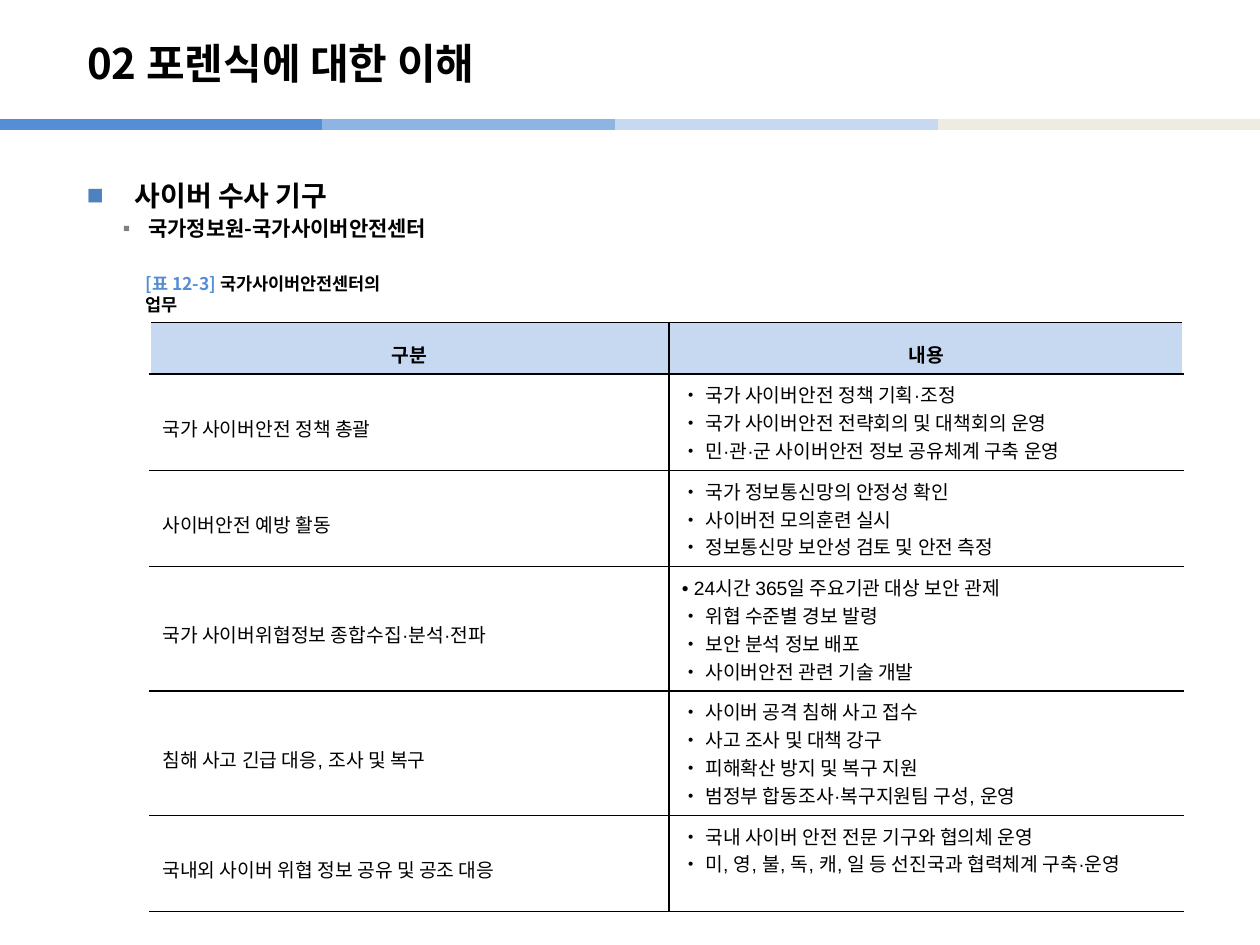
from dataclasses import dataclass

from lxml.etree import SubElement
from pptx import Presentation
from pptx.dml.color import RGBColor
from pptx.enum.shapes import MSO_CONNECTOR
from pptx.enum.text import MSO_ANCHOR, PP_ALIGN
from pptx.oxml.ns import qn
from pptx.util import Cm, Pt


@dataclass(frozen=True)
class Theme:
    """Colours, fonts and type sizes of the slide."""
    black: str = "000000"
    white: str = "FFFFFF"
    blue: str = "558ED5"
    sky: str = "8EB4E3"
    pale: str = "C6D9F1"
    sand: str = "EEECE1"
    mark: str = "4F81BD"
    grey: str = "808080"
    sans: str = "Arial"
    noto: str = "Noto Sans CJK KR"
    title: int = 24
    head: int = 16
    sub: int = 12
    cell: int = 11
    note: int = 10


THEME = Theme()

TASKS = [
    ("국가 사이버안전 정책 총괄", [
        "국가 사이버안전 정책 기획·조정",
        "국가 사이버안전 전략회의 및 대책회의 운영",
        "민·관·군 사이버안전 정보 공유체계 구축 운영"]),
    ("사이버안전 예방 활동", [
        "국가 정보통신망의 안정성 확인",
        "사이버전 모의훈련 실시",
        "정보통신망 보안성 검토 및 안전 측정"]),
    ("국가 사이버위협정보 종합수집·분석·전파", [
        "24시간 365일 주요기관 대상 보안 관제",
        "위협 수준별 경보 발령",
        "보안 분석 정보 배포",
        "사이버안전 관련 기술 개발"]),
    ("침해 사고 긴급 대응, 조사 및 복구", [
        "사이버 공격 침해 사고 접수",
        "사고 조사 및 대책 강구",
        "피해확산 방지 및 복구 지원",
        "범정부 합동조사·복구지원팀 구성, 운영"]),
    ("국내외 사이버 위협 정보 공유 및 공조 대응", [
        "국내 사이버 안전 전문 기구와 협의체 운영",
        "미, 영, 불, 독, 캐, 일 등 선진국과 협력체계 구축·운영"]),
]


def style(font, size, name, bold=True, tint=THEME.black):
    """Set the size, face, weight and colour of a font."""
    font.size, font.name, font.bold = Pt(size), name, bold
    font.color.rgb = RGBColor.from_string(tint)


def bullet(para, sign, tint, left, hang):
    """Give a paragraph a coloured bullet and a hanging indent."""
    props = para._p.get_or_add_pPr()
    props.set("marL", str(Cm(left)))
    props.set("indent", str(-Cm(hang)))
    SubElement(SubElement(props, qn("a:buClr")), qn("a:srgbClr"), val=tint)
    SubElement(props, qn("a:buFont"), typeface=THEME.sans)
    SubElement(props, qn("a:buChar"), char=sign)


def border(cell, sides):
    """Draw thin black rules on the named sides of a cell."""
    props = cell._tc.get_or_add_tcPr()
    for side in sides:
        line = SubElement(props, qn(f"a:ln{side}"), w=str(Pt(1)))
        fill = SubElement(line, qn("a:solidFill"))
        SubElement(fill, qn("a:srgbClr"), val=THEME.black)


def add_band(slide, left, top, width):
    """Draw the four-colour rule, with the first part on top."""
    part = width / 4
    tints = [THEME.blue, THEME.sky, THEME.pale, THEME.sand]
    for step in (1, 2, 3, 0):
        start = left + step * part - (0.59 if step == 1 else 0)
        end = left + (step + 1) * part + (0.15 if step == 0 else 0)
        if step == 1:
            end = left + 2 * part - 0.5 + 0.04
        start = left + [0, 5.89, 12.4, 18.9][step]
        end = left + [6.5, 12.4, 18.9, width][step]
        line = slide.shapes.add_connector(
            MSO_CONNECTOR.STRAIGHT, Cm(start), Cm(top), Cm(end), Cm(top))
        line.line.width = Pt(6)
        line.line.color.rgb = RGBColor.from_string(tints[step])
        SubElement(line._element.spPr, qn("a:effectLst"))


def add_title(slide, left, top, width, height):
    """Place and format the slide title."""
    title = slide.shapes.title
    title.left, title.top = Cm(left), Cm(top)
    title.width, title.height = Cm(width), Cm(height)
    frame = title.text_frame
    frame.text = "02 포렌식에 대한 이해"
    frame.vertical_anchor = MSO_ANCHOR.MIDDLE
    para = frame.paragraphs[0]
    para.alignment = PP_ALIGN.LEFT
    style(para.font, THEME.title, THEME.noto)


def add_text(slide, left, top, width, height):
    """Add the topic and its sub-topic as a bulleted list."""
    box = slide.shapes.add_textbox(Cm(left), Cm(top), Cm(width), Cm(height))
    frame = box.text_frame
    frame.word_wrap = True
    head, sub = frame.paragraphs[0], frame.add_paragraph()
    head.text, sub.text = "사이버 수사 기구", "국가정보원-국가사이버안전센터"
    sub.level = 1
    bullet(head, "■", THEME.mark, 0.97, 0.97)
    bullet(sub, "▪", THEME.grey, 1.24, 0.51)
    head.line_spacing = 1.2
    sub.space_before, sub.space_after = Pt(2.4), Pt(4)
    style(head.font, THEME.head, THEME.sans)
    style(sub.font, THEME.sub, THEME.noto)


def add_note(slide, left, top, width, height):
    """Add the caption of the table."""
    box = slide.shapes.add_textbox(Cm(left), Cm(top), Cm(width), Cm(height))
    frame = box.text_frame
    frame.word_wrap = False
    frame.vertical_anchor = MSO_ANCHOR.MIDDLE
    para = frame.paragraphs[0]
    for text, tint in (("[표 12-3] ", THEME.blue),
                       ("국가사이버안전센터의 업무", THEME.black)):
        run = para.add_run()
        run.text = text
        style(run.font, THEME.note, THEME.noto, tint=tint)


def fill_cell(cell, lines, sides, top):
    """Write the lines of one cell and set its fill, rules and type."""
    border(cell, sides)
    cell.fill.solid()
    tint = THEME.pale if top else THEME.white
    cell.fill.fore_color.rgb = RGBColor.from_string(tint)
    cell.text = "\n".join(lines)
    for para in cell.text_frame.paragraphs:
        if top:
            para.alignment = PP_ALIGN.CENTER
        if len(lines) == 1:
            para.line_spacing = 1.4
        style(para.font, THEME.cell, THEME.sans, bold=top)


def add_tasks(slide, left, top, width, height):
    """Add the table of tasks, with row heights set by line count."""
    rows = [("구분", ["내용"])] + TASKS
    counts = [1.4, 3, 3, 4, 4, 3]
    pad = 0.25
    unit = (height - pad * len(rows)) / sum(counts)
    table = slide.shapes.add_table(
        len(rows), 2, Cm(left), Cm(top), Cm(width), Cm(height)).table
    table.first_row = table.horz_banding = False
    table.columns[0].width = Cm(10.47)
    table.columns[1].width = Cm(width - 10.47)
    for index, (name, items) in enumerate(rows):
        first = index == 0
        table.rows[index].height = Cm(counts[index] * unit + pad)
        rules = "TB"
        key, info = table.cell(index, 0), table.cell(index, 1)
        fill_cell(key, [name], "R" + rules, first)
        lines = items if first else [f"• {item}" for item in items]
        fill_cell(info, lines, "L" + rules, first)
        if not first:
            key.vertical_anchor = MSO_ANCHOR.MIDDLE


def main():
    """Build the slide and save it."""
    deck = Presentation()
    deck.slide_width, deck.slide_height = Cm(25.4), Cm(19.05)
    slide = deck.slides.add_slide(deck.slide_layouts[5])
    add_band(slide, 0, 2.51, 25.4)
    add_title(slide, 1.5, 0.51, 21, 1.52)
    add_text(slide, 1.5, 3.33, 22.8, 15)
    add_tasks(slide, 3.02, 6.5, 20.83, 11.88)
    add_note(slide, 2.69, 5.54, 5.3, 0.79)
    deck.save("out.pptx")


if __name__ == "__main__":
    main()
